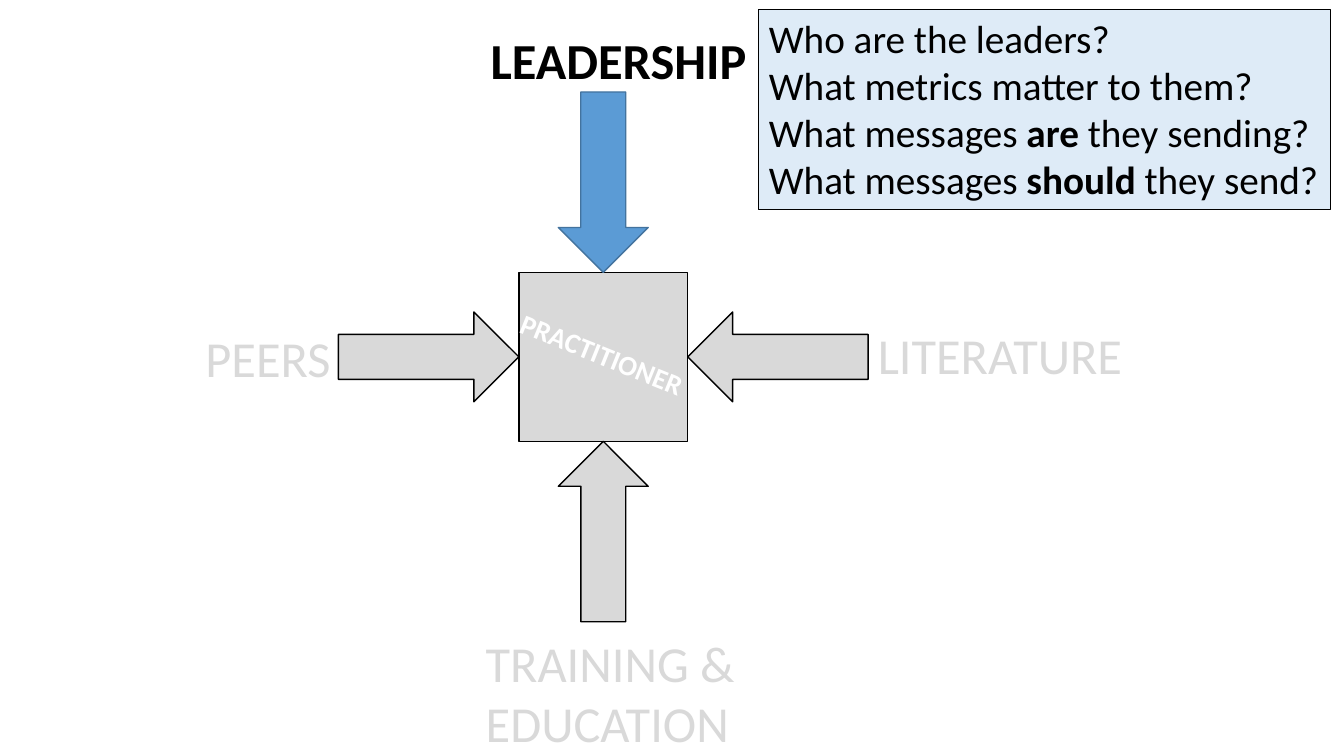
from pptx import Presentation
from pptx.dml.color import RGBColor
from pptx.enum import shapes, text
from pptx.util import Pt

COLOURS = {"black": "000000", "white": "FFFFFF", "muted": "D9D9D9",
           "blue": "5B9BD5", "blue edge": "43739E", "pale blue": "DEEBF7"}
FONT = "Calibri"

# Each line is a list of (words, bold) runs.
QUESTIONS = [
    [("Who are the leaders?", False)],
    [("What metrics matter to them?", False)],
    [("What messages ", False), ("are", True), (" they sending?", False)],
    [("What messages ", False), ("should", True), (" they send?", False)],
]
QUESTION_BOX = (542.16, 6.48, 408.24, 143.28)

# Lines, (left, top, width, height), size, colour, bold, rotation
LABELS = [
    (["LEADERSHIP"], (343.44, 17.28, 199.44, 51.12), 36, "black", True, 0),
    (["PEERS"], (139.68, 230.4, 105.12, 51.12), 36, "muted", False, 0),
    (["LITERATURE"], (619.92, 228.24, 190.8, 51.12), 36, "muted", False, 0),
    (["TRAINING &", "EDUCATION"], (339.84, 447.84, 202.32, 94.32), 36, "muted", False, 0),
    (["PRACTITIONER"], (361.44, 237.6, 138.24, 31.68), 20, "white", True, 22),
]

# Direction from the centre (x, y), preset, rotation, fill, line
ARROWS = [
    (-1, 0, "RIGHT_ARROW", 0, "muted", "black"),
    (0, -1, "DOWN_ARROW", 0, "blue", "blue edge"),
    (1, 0, "RIGHT_ARROW", 180, "muted", "black"),
    (0, 1, "DOWN_ARROW", 180, "muted", "black"),
]
CENTRE_X, CENTRE_Y = 430.9, 254.9
SQUARE_SIDE = 120.6
ARROW_LENGTH, ARROW_BREADTH = 128.9, 64.2


def colour(name):
    return RGBColor.from_string(COLOURS[name])


def add_block(slide, preset, box, fill, line, line_width=1):
    shape = slide.shapes.add_shape(getattr(shapes.MSO_SHAPE, preset), *map(Pt, box))
    shape.shadow.inherit = False
    shape.fill.solid()
    shape.fill.fore_color.rgb = colour(fill)
    shape.line.color.rgb = colour(line)
    shape.line.width = Pt(line_width)
    return shape


def centred_box(x, y, width, height):
    return x - width / 2, y - height / 2, width, height


def write_lines(shape, lines, size, colour_name, wrap):
    """Fill the shape with lines, each a list of (words, bold) runs."""
    frame = shape.text_frame
    frame.word_wrap = wrap
    frame.auto_size = text.MSO_AUTO_SIZE.SHAPE_TO_FIT_TEXT
    frame.vertical_anchor = text.MSO_ANCHOR.TOP
    for index, line in enumerate(lines):
        paragraph = frame.add_paragraph() if index else frame.paragraphs[0]
        paragraph.alignment = text.PP_ALIGN.LEFT
        for words, bold in line:
            run = paragraph.add_run()
            run.text = words
            for name, value in {"name": FONT, "size": Pt(size), "bold": bold}.items():
                setattr(run.font, name, value)
            run.font.color.rgb = colour(colour_name)


def main():
    presentation = Presentation()
    presentation.slide_width, presentation.slide_height = Pt(960), Pt(540)
    slide = presentation.slides.add_slide(presentation.slide_layouts[6])

    question_box = add_block(slide, "RECTANGLE", QUESTION_BOX, "pale blue", "black", 0.75)
    write_lines(question_box, QUESTIONS, 28, "black", True)

    square = centred_box(CENTRE_X, CENTRE_Y, SQUARE_SIDE, SQUARE_SIDE)
    add_block(slide, "RECTANGLE", square, "muted", "black")

    reach = (SQUARE_SIDE + ARROW_LENGTH) / 2
    for dx, dy, preset, rotation, fill, line in ARROWS:
        width, height = (ARROW_LENGTH, ARROW_BREADTH) if dx else (ARROW_BREADTH, ARROW_LENGTH)
        box = centred_box(CENTRE_X + dx * reach, CENTRE_Y + dy * reach, width, height)
        add_block(slide, preset, box, fill, line).rotation = rotation

    for lines, box, size, colour_name, bold, rotation in LABELS:
        label = slide.shapes.add_textbox(*map(Pt, box))
        label.rotation = rotation
        write_lines(label, [[(line, bold)] for line in lines], size, colour_name, False)

    presentation.save("out.pptx")


if __name__ == "__main__":
    main()
